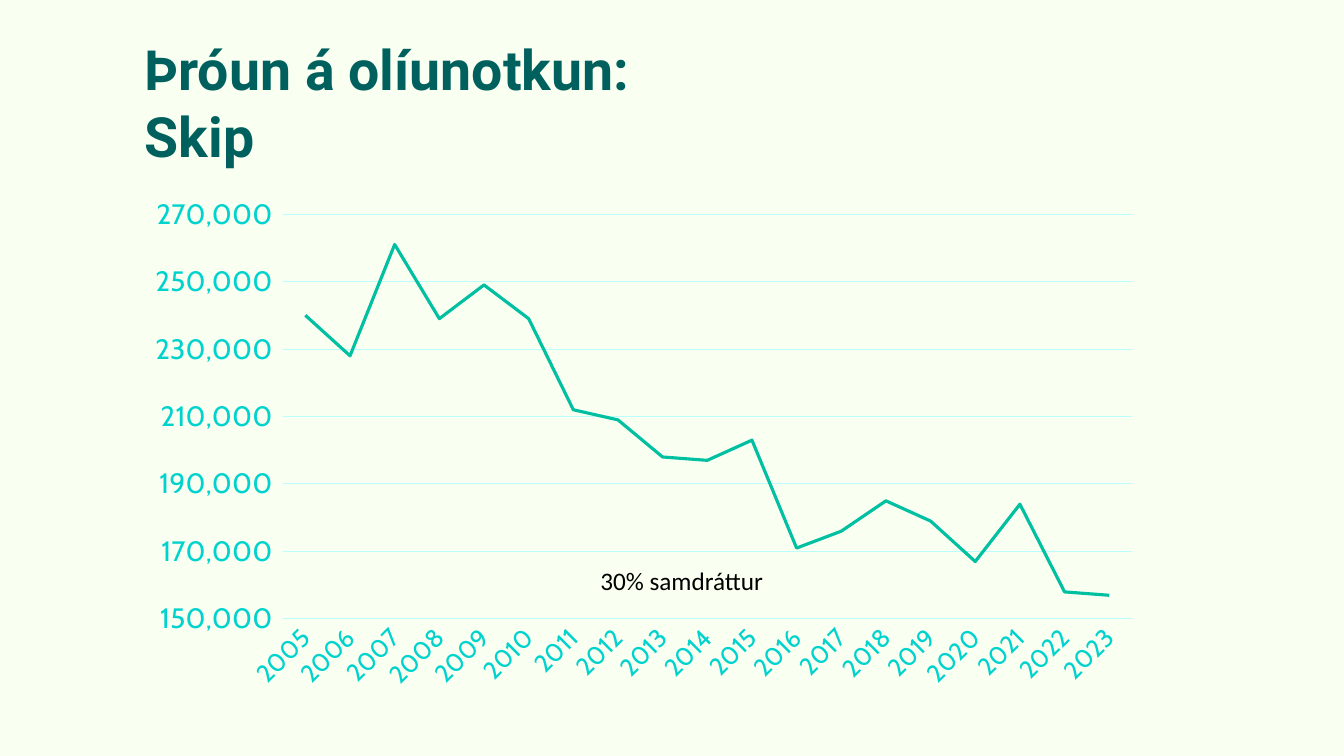
from pptx import Presentation
from pptx.chart.data import CategoryChartData
from pptx.dml.color import RGBColor
from pptx.enum.chart import XL_CHART_TYPE, XL_TICK_MARK
from pptx.enum.text import MSO_ANCHOR, MSO_AUTO_SIZE
from pptx.util import Cm, Pt

LINE_CHART = XL_CHART_TYPE.LINE
NO_TICK = XL_TICK_MARK.NONE
BOTTOM, TOP = MSO_ANCHOR.BOTTOM, MSO_ANCHOR.TOP
GROW, FIXED = MSO_AUTO_SIZE.SHAPE_TO_FIT_TEXT, MSO_AUTO_SIZE.NONE

COLORS = {
    "background": "F9FFF1",
    "title": "00605E",
    "caption": "000000",
    "chart": "00302F",
    "axis": "00D2CD",
    "grid": "BAFFFE",
    "series": "00C0A1",
}
FORMATS = {
    "title": {"name": "Roboto", "size": Pt(39.6), "bold": True},
    "caption": {"name": "Calibri", "size": Pt(18), "bold": False},
    "chart": {"name": "Cabin", "size": Pt(10), "bold": False},
    "category": {"name": "Cabin", "size": Pt(18), "bold": False},
    "value": {"name": "Cabin", "size": Pt(20), "bold": False},
}
FIRST_YEAR = 2005
OIL_USE_THOUSANDS = [240, 228, 261, 239, 249, 239, 212, 209, 198, 197,
                     203, 171, 176, 185, 179, 167, 184, 158, 157]


class SlideBuilder:
    def __init__(self, deck):
        self.page = deck.slides.add_slide(deck.slide_layouts[6])
        fill = self.page.background.fill
        fill.solid()
        fill.fore_color.rgb = self.color("background")

    def color(self, name):
        return RGBColor.from_string(COLORS[name])

    def style_font(self, font, style, color):
        for name, value in FORMATS[style].items():
            setattr(font, name, value)
        font.color.rgb = self.color(color)

    def style_line(self, line, color, width):
        line.color.rgb = self.color(color)
        line.width = Pt(width)

    def text(self, wording, place, style, anchor=TOP, sizing=FIXED):
        box = self.page.shapes.add_textbox(*map(Cm, place))
        frame_format = {"word_wrap": True, "vertical_anchor": anchor, "auto_size": sizing}
        for name, value in frame_format.items():
            setattr(box.text_frame, name, value)
        span = box.text_frame.paragraphs[0].add_run()
        span.text = wording
        self.style_font(span.font, style, style)

    def line_chart(self, place, years, amounts):
        data = CategoryChartData()
        data.categories = years
        data.add_series("Series 1", amounts)
        chart = self.page.shapes.add_chart(LINE_CHART, *map(Cm, place), data).chart
        chart.has_legend = False
        chart.has_title = False
        self.style_font(chart.font, "chart", "chart")
        chart.plots[0].vary_by_categories = False

        series = chart.plots[0].series[0]
        series.smooth = False
        self.style_line(series.format.line, "series", 2.25)

        for axis, style in ((chart.category_axis, "category"), (chart.value_axis, "value")):
            axis.major_tick_mark = NO_TICK
            axis.minor_tick_mark = NO_TICK
            self.style_font(axis.tick_labels.font, style, "axis")

        self.style_line(chart.category_axis.format.line, "grid", 0.75)
        chart.category_axis._element.txPr.bodyPr.set("rot", str(-45 * 60000))

        scale = {"minimum_scale": 150000, "maximum_scale": 270000, "major_unit": 20000}
        for name, value in scale.items():
            setattr(chart.value_axis, name, value)
        chart.value_axis.format.line.fill.background()
        self.style_line(chart.value_axis.major_gridlines.format.line, "grid", 0.75)
        labels = chart.value_axis.tick_labels
        labels.number_format = r"#,##0_ ;\-#,##0\ "
        labels.number_format_is_linked = False


def main():
    deck = Presentation()
    deck.slide_width = Cm(33.87)
    deck.slide_height = Cm(19.05)
    builder = SlideBuilder(deck)
    years = [str(FIRST_YEAR + step) for step in range(len(OIL_USE_THOUSANDS))]
    amounts = [thousands * 1000 for thousands in OIL_USE_THOUSANDS]
    builder.line_chart((3.4, 4.7, 25.63, 12.95), years, amounts)
    builder.text("Þróun á olíunotkun: Skip", (3.4, 0.69, 14.02, 3.68), "title", anchor=BOTTOM)
    builder.text("30% samdráttur", (14.88, 14.12, 5.08, 1.02), "caption", sizing=GROW)
    deck.save("out.pptx")


if __name__ == "__main__":
    main()
